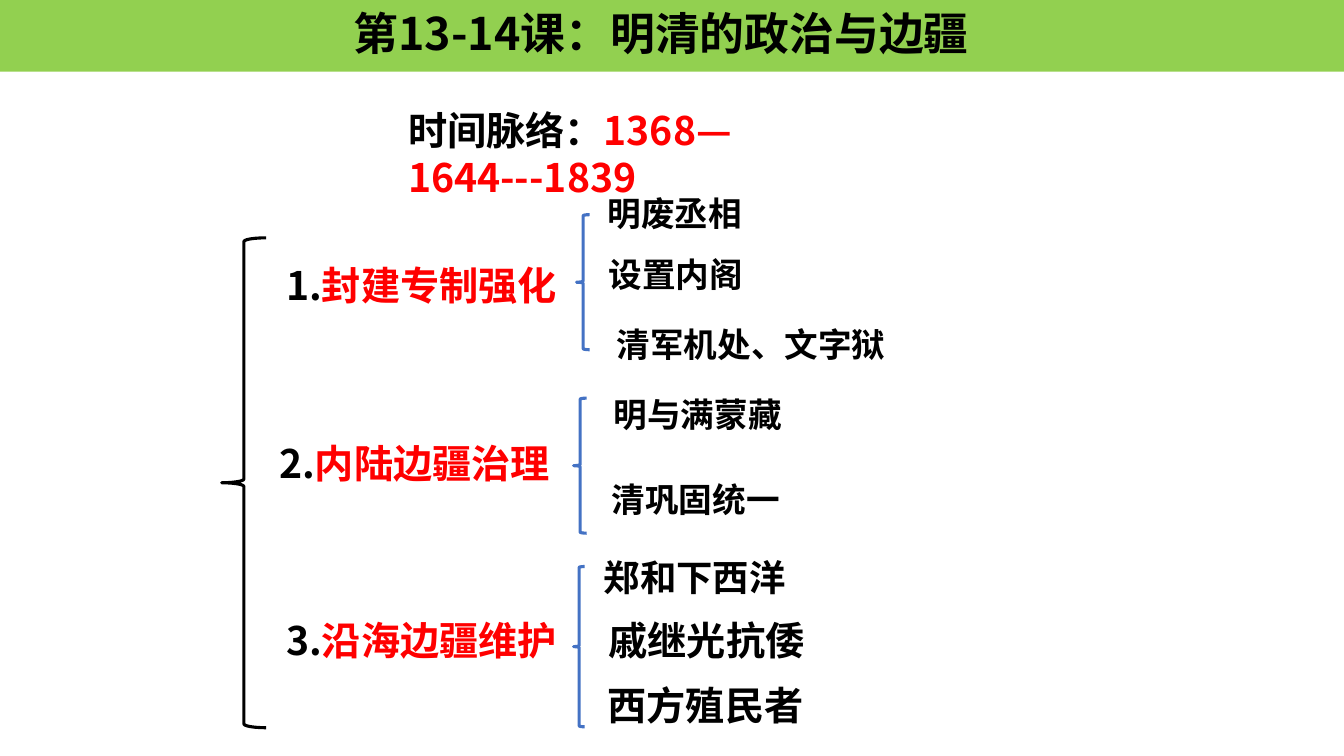
import collections

import lxml.etree
import pptx
import pptx.dml.color
import pptx.enum.shapes
import pptx.enum.text
import pptx.oxml.ns
import pptx.util

# The slide is laid on a grid of square cells, ten to the inch.
CELL = pptx.util.Inches(0.1)
COLUMNS, ROWS = 133.33, 75
COLORS = {"band": "92D050", "text": "000000", "accent": "FF0000", "branch": "4472C4"}
FONTS = {"chinese": "Noto Sans CJK SC", "numbered": "Noto Sans CJK JP"}
LINE_WIDTH = 2.25

Box = collections.namedtuple("Box", "left top width height")
Leaf = collections.namedtuple("Leaf", "text size box")

# Topic, brace and leaf boxes count from the top left corner of their branch.
BRANCHES = [
    {
        "box": Box(27.4, 18.6, 65.4, 18.1),
        "topic": ("1.", "封建专制强化", Box(0, 6.8, 30, 5.7)),
        "brace": Box(29.8, 2.7, 1.3, 13.4),
        "leaves": [
            Leaf("明废丞相", 24, Box(31.9, 0, 19.5, 5)),
            Leaf("设置内阁", 24, Box(32, 6.1, 15.8, 5)),
            Leaf("清军机处、文字狱", 24, Box(32.8, 13, 32.6, 5.1)),
        ],
    },
    {
        "box": Box(26.7, 38.6, 59.1, 14.3),
        "topic": ("2.", "内陆边疆治理", Box(0, 4.5, 29.2, 5.7)),
        "brace": Box(30.2, 0.9, 1.3, 13.4),
        "leaves": [
            Leaf("明与满蒙藏", 24, Box(33.2, 0, 23.1, 5)),
            Leaf("清巩固统一", 24, Box(33, 8.4, 26.1, 5)),
        ],
    },
    {
        "box": Box(27.4, 54.6, 56.6, 18.2),
        "topic": ("3.", "沿海边疆维护", Box(0, 6.1, 29.5, 5.7)),
        "brace": Box(29.5, 1.6, 1.1, 15.9),
        "leaves": [
            Leaf("郑和下西洋", 26, Box(31.5, 0, 25.1, 5.4)),
            Leaf("戚继光抗倭", 28, Box(32, 6.1, 22.9, 5.7)),
            Leaf("西方殖民者", 28, Box(31.9, 12.5, 22.9, 5.7)),
        ],
    },
]


def within(outer, inner):
    return Box(outer.left + inner.left, outer.top + inner.top, inner.width, inner.height)


def lengths(box):
    return [round(cells * CELL) for cells in box]


def rgb(name):
    return pptx.dml.color.RGBColor.from_string(COLORS[name])


def apply_format(target, values):
    for name, value in values.items():
        setattr(target, name, value)


def write(shape, parts, size, font="chinese", align=pptx.enum.text.PP_ALIGN.LEFT):
    """Fill the shape with one bold paragraph made of (text, color name) parts."""
    frame = shape.text_frame
    apply_format(frame, {
        "word_wrap": True,
        "auto_size": pptx.enum.text.MSO_AUTO_SIZE.SHAPE_TO_FIT_TEXT,
        "vertical_anchor": pptx.enum.text.MSO_ANCHOR.TOP,
    })
    paragraph = frame.paragraphs[0]
    apply_format(paragraph, {"alignment": align, "line_spacing": 1.0})
    for text, color in parts:
        run = paragraph.add_run()
        run.text = text
        apply_format(run.font, {
            "size": pptx.util.Pt(size), "bold": True, "name": FONTS[font],
        })
        run.font.color.rgb = rgb(color)
        east_asian = lxml.etree.SubElement(run.font._element, pptx.oxml.ns.qn("a:ea"))
        east_asian.set("typeface", FONTS[font])


def add_text(slide, box, parts, size, font="chinese"):
    write(slide.shapes.add_textbox(*lengths(box)), parts, size, font)


def add_brace(slide, box, color):
    brace = slide.shapes.add_shape(
        pptx.enum.shapes.MSO_SHAPE.LEFT_BRACE, *lengths(box))
    brace.shadow.inherit = False
    brace.fill.background()
    brace.line.color.rgb = rgb(color)
    brace.line.width = pptx.util.Pt(LINE_WIDTH)


def add_header(slide, box):
    band = slide.shapes.add_shape(
        pptx.enum.shapes.MSO_SHAPE.RECTANGLE, *lengths(box))
    band.shadow.inherit = False
    band.fill.solid()
    band.fill.fore_color.rgb = rgb("band")
    band.line.fill.background()

    title = slide.shapes.title
    band._element.addnext(title._element)
    title_box = within(box, Box(29.5, 0.1, 72.2, 6.4))
    apply_format(title, dict(zip(title_box._fields, lengths(title_box))))
    write(title, [("第13-14课：明清的政治与边疆", "text")], 32,
          align=pptx.enum.text.PP_ALIGN.CENTER)


def add_timeline(slide, box):
    add_text(slide, box, [("时间脉络：", "text"), ("1368—1644---1839", "accent")], 28)


def add_branch(slide, box, topic, brace, leaves):
    number, name, topic_box = topic
    add_text(slide, within(box, topic_box),
             [(number, "text"), (name, "accent")], 28, "numbered")
    add_brace(slide, within(box, brace), "branch")
    for leaf in leaves:
        add_text(slide, within(box, leaf.box), [(leaf.text, "text")], leaf.size)


def add_outline(slide, box):
    add_brace(slide, within(box, Box(0, 5, 4.4, 48.6)), "text")
    for branch in BRANCHES:
        add_branch(slide, **branch)


def main():
    presentation = pptx.Presentation()
    presentation.slide_width = round(COLUMNS * CELL)
    presentation.slide_height = ROWS * CELL
    slide = presentation.slides.add_slide(presentation.slide_layouts.get_by_name("Title Only"))
    add_header(slide, Box(0, 0, COLUMNS, 7.1))
    add_timeline(slide, Box(39.5, 10.1, 55.5, 5.7))
    add_outline(slide, Box(22, 18.6, 70.8, 54.2))
    presentation.save("out.pptx")


if __name__ == "__main__":
    main()
